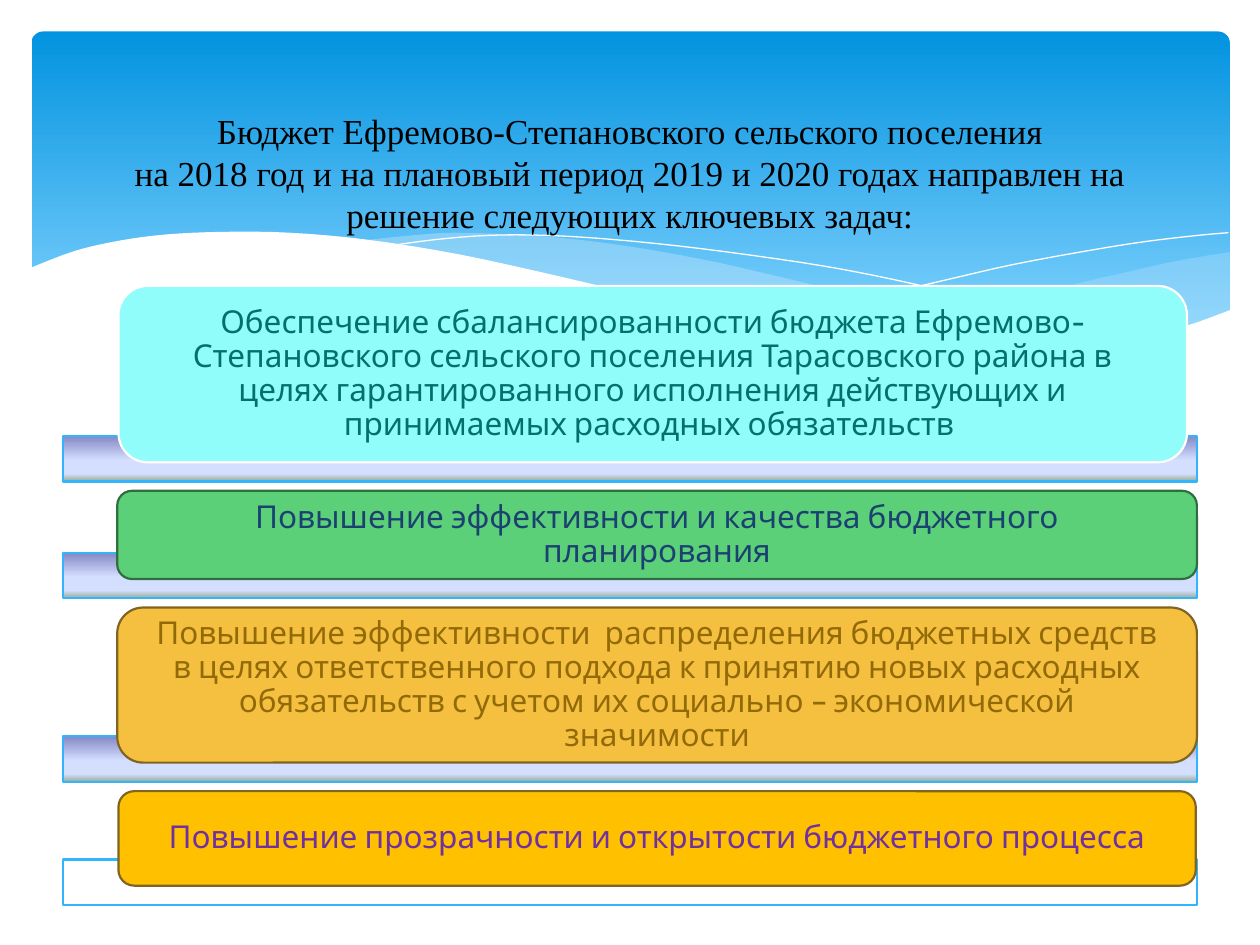
from dataclasses import dataclass

from lxml.etree import SubElement
from pptx import Presentation
from pptx.dml.color import RGBColor
from pptx.enum.shapes import MSO_SHAPE as Shape
from pptx.enum.text import MSO_ANCHOR as Anchor, PP_ALIGN as Align
from pptx.oxml import parse_xml
from pptx.oxml.ns import nsdecls, qn
from pptx.util import Pt


@dataclass(frozen=True)
class Theme:
    sky: tuple = ((0, "0293E0"), (90, "83D3FE"))
    bar: tuple = ((0, "8488C4"), (53, "D4DEFF"), (83, "D4DEFF"), (100, "96AB94"))
    wave: str = "C6E7FC"
    white: str = "FFFFFF"
    black: str = "000000"
    bar_line: str = "31B6FD"
    title_font: str = "Times New Roman"
    title_size: float = 20
    card_font: str = "Cabin"
    card_size: float = 18
    line_width: float = 1.25


THEME = Theme()

# Wave edges, in points from the top left of the header
RIGHT_TOP = [(685, 126), (655, 131), (624, 138), (602, 143), (562, 153),
             (524, 161), (490, 167), (458, 173)]
RIGHT_BOTTOM = [(458, 173), (490, 177), (518, 180), (552, 181.5), (583, 181.5),
                (616, 178.5), (645, 173), (665, 167), (685, 160)]
MIDDLE_TOP = [(625, 178.5), (585, 173), (540, 165), (490, 155), (435, 142),
              (392, 132), (352, 124.5), (317, 119.5), (284, 116.5), (242, 115),
              (218, 116.5), (188, 119.5)]
MIDDLE_BOTTOM = [(188, 119.5), (228, 125), (273, 134), (305, 142), (364, 155),
                 (415, 165.5), (461, 173.5), (502, 179), (539, 181.5),
                 (578, 182), (606, 180.5), (625, 178.5)]
LONG_LINE = [(204.5, 122.5), (230, 119), (261, 116.5), (294, 116.5), (334, 119),
             (382, 124), (440, 132), (482, 139.5), (529, 150), (580, 162.5),
             (635, 178)]
SHORT_LINE = [(423.5, 167), (466, 155.5), (520.5, 142.5), (562, 133),
              (605.5, 125), (637, 120), (667, 116.5), (684, 115)]
FRONT_TOP = [(685.5, 159), (659, 168.5), (629, 175.5), (594, 180),
             (564.5, 181.5), (530, 180), (492, 176.5), (448.5, 170.5),
             (399, 162), (344, 150), (304, 140.5), (245, 127.5), (192, 119),
             (147.5, 115), (109.5, 114.5), (77, 116), (50.5, 119.5),
             (24.5, 125.5), (-1.5, 135.5)]
FRONT_BASE = [(-1.5, 219), (685.5, 219)]

TITLE = ("Бюджет Ефремово-Степановского сельского поселения",
         "на 2018 год и на плановый период 2019 и 2020 годах направлен на "
         "решение следующих ключевых задач:")

# left offset, width, height, fill, outline, text colour, bar fill, text
CARDS = [
    (31.7, 610.6, 100.8, "91FDFA", "FFFFFF", "03706E", THEME.bar,
     "Обеспечение сбалансированности бюджета Ефремово-Степановского сельского "
     "поселения Тарасовского района в целях гарантированного исполнения "
     "действующих и принимаемых расходных обязательств "),
    (31, 617, 50.4, "5BD078", "306D3F", "1B4171", THEME.bar,
     "Повышение эффективности и качества бюджетного планирования"),
    (31, 617, 88.6, "F5C040", "806421", "936A08", THEME.bar,
     "Повышение эффективности  распределения бюджетных средств в целях "
     "ответственного подхода к принятию новых расходных обязательств с учетом "
     "их социально – экономической значимости"),
    (31.7, 615.6, 54, "FFC000", "806421", "7030A0", None,
     "Повышение прозрачности и открытости бюджетного процесса"),
]


def paint(shape, fill=None, opacity=100, line=None, width=0):
    """Fill with a colour, or downwards with a tuple of gradient stops."""
    shape.shadow.inherit = False
    if fill is None:
        shape.fill.background()
    elif isinstance(fill, tuple):
        shape.fill.gradient()
        shape.fill.gradient_angle = 270
        stops = "".join(f'<a:gs pos="{at * 1000}"><a:srgbClr val="{color}"/></a:gs>'
                        for at, color in fill)
        old = shape.fill._fill._gradFill.find(qn("a:gsLst"))
        old.getparent().replace(
            old, parse_xml(f'<a:gsLst {nsdecls("a")}>{stops}</a:gsLst>'))
    else:
        shape.fill.solid()
        shape.fill.fore_color.rgb = RGBColor.from_string(fill)
        if opacity < 100:
            color = shape._element.spPr.find(qn("a:solidFill"))[0]
            SubElement(color, qn("a:alpha"), val=str(opacity * 1000))
    if line:
        shape.line.color.rgb = RGBColor.from_string(line)
        shape.line.width = Pt(width)
    else:
        shape.line.fill.background()


def add_box(page, kind, box, **style):
    shape = page.shapes.add_shape(kind, *(Pt(length) for length in box))
    paint(shape, **style)
    return shape


def smooth(knots, steps=4):
    """Points of a Catmull-Rom curve through the knots."""
    ends = [knots[0], *knots, knots[-1]]
    points = [knots[0]]
    for a, b, c, d in zip(ends, ends[1:], ends[2:], ends[3:]):
        for step in range(1, steps + 1):
            t = step / steps
            points.append(tuple(
                (2 * q + (r - p) * t + (2 * p - 5 * q + 4 * r - s) * t ** 2
                 + (3 * q - p - 3 * r + s) * t ** 3) / 2
                for p, q, r, s in zip(a, b, c, d)))
    return points


def add_outline(page, box, points, close=True, **style):
    placed = [(Pt(box[0] + x), Pt(box[1] + y)) for x, y in points]
    builder = page.shapes.build_freeform(*placed[0])
    builder.add_line_segments(placed[1:], close=close)
    paint(builder.convert_to_shape(), **style)


def add_header(page, box):
    panel = add_box(page, Shape.ROUNDED_RECTANGLE, box, fill=THEME.sky)
    panel.adjustments[0] = 0.034
    for top, bottom, opacity in ((RIGHT_TOP, RIGHT_BOTTOM, 29),
                                 (MIDDLE_TOP, MIDDLE_BOTTOM, 40)):
        add_outline(page, box, smooth(top) + smooth(bottom),
                    fill=THEME.wave, opacity=opacity)
    for edge in (LONG_LINE, SHORT_LINE):
        add_outline(page, box, smooth(edge), close=False, line=THEME.white)
    add_outline(page, box, smooth(FRONT_TOP) + FRONT_BASE, fill=THEME.white)


def add_span(para, text, font, size, color):
    span = para.add_run()
    span.text = text
    span.font.name = font
    span.font.size = Pt(size)
    span.font.color.rgb = RGBColor.from_string(color)


def add_cards(page, box, bar_height=26, overlap=15, gap=5.3):
    """Stack the cards, each covering the top of a bar as wide as the box."""
    left, top, width, _ = box
    for offset, card_width, height, fill, line, color, bar_fill, text in CARDS:
        bar_top = top + height - overlap
        add_box(page, Shape.RECTANGLE, (left, bar_top, width, bar_height),
                fill=bar_fill or THEME.white, opacity=100 if bar_fill else 90,
                line=THEME.bar_line, width=THEME.line_width)
        card = add_box(page, Shape.ROUNDED_RECTANGLE,
                       (left + offset, top, card_width, height),
                       fill=fill, line=line, width=THEME.line_width)
        frame = card.text_frame
        frame.word_wrap = True
        frame.vertical_anchor = Anchor.MIDDLE
        frame.margin_left = frame.margin_right = Pt(17.28)
        frame.margin_top = frame.margin_bottom = 0
        para = frame.paragraphs[0]
        para.alignment = Align.CENTER
        para.line_spacing = 0.9
        add_span(para, text, THEME.card_font, THEME.card_size, color)
        top = bar_top + bar_height + gap


def add_title(page, box):
    frame = page.shapes.add_textbox(*(Pt(length) for length in box)).text_frame
    frame.word_wrap = True
    frame.vertical_anchor = Anchor.MIDDLE
    frame.margin_bottom = Pt(26)
    para = frame.paragraphs[0]
    para.alignment = Align.CENTER
    for index, line in enumerate(TITLE):
        if index:
            para.add_line_break()
        add_span(para, line, THEME.title_font, THEME.title_size, THEME.black)


def main():
    deck = Presentation()
    deck.slide_width, deck.slide_height = Pt(720), Pt(540)
    page = deck.slides.add_slide(deck.slide_layouts[6])
    add_header(page, (18, 18, 684.7, 194.4))
    add_cards(page, (36, 163.4, 648, 353.6))
    add_title(page, (36, 56.2, 648, 106.6))
    deck.save("out.pptx")


if __name__ == "__main__":
    main()
